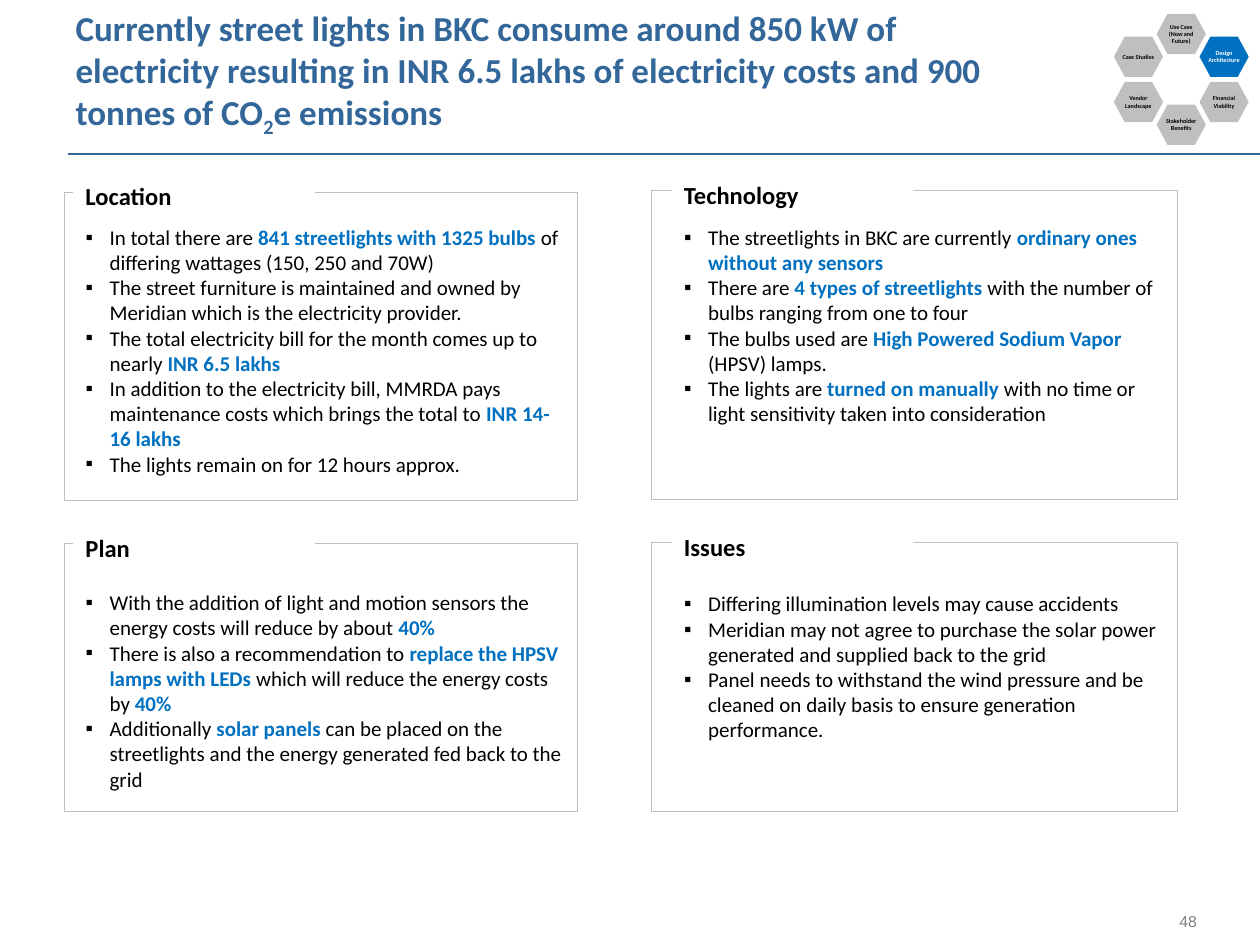
import math
from lxml import etree
from pptx import Presentation, util as u
from pptx.dml.color import RGBColor
from pptx.enum import shapes, text
from pptx.oxml.ns import qn

# Grid: 100 columns by 75 rows of square cells
COLS, ROWS = 100, 75
CELL = u.Inches(0.1)
NAVY, BLUE, GREY, BLACK, WHITE = "336699", "0070C0", "BFBFBF", "000000", "FFFFFF"
ALIGN, ANCHOR = text.PP_ALIGN, text.MSO_ANCHOR

TITLE = ("Currently street lights in BKC consume around 850 kW of electricity resulting in "
         "INR 6.5 lakhs of electricity costs and 900 tonnes of CO", "2", "e emissions")

# Frame box, heading inset and lift, list drop and height, heading, list (** marks emphasis)
PANELS = [
    ((5.1, 15.3, 40.7, 24.4), (0.7, 1.4), (2, 21.2), "Location", [
        "In total there are **841 streetlights with 1325 bulbs **of differing wattages (150, 250 and 70W)",
        "The street furniture is maintained and owned by Meridian which is the electricity provider.",
        "The total electricity bill for the month comes up to nearly **INR 6.5 lakhs**",
        "In addition to the electricity bill, MMRDA pays maintenance costs which brings "
        "the total to **INR 14-16 lakhs**",
        "The lights remain on for 12 hours approx."]),
    ((51.7, 15.1, 41.7, 24.5), (1.6, 1.3), (2.2, 21.2), "Technology", [
        "The streetlights in BKC are currently **ordinary ones without any sensors**",
        "There are **4 types of streetlights **with the number of bulbs ranging from one to four",
        "The bulbs used are **High Powered Sodium Vapor **(HPSV) lamps.",
        "The lights are **turned on manually **with no time or light sensitivity taken into consideration"]),
    ((5.1, 43.1, 40.7, 21.3), (0.7, 1.3), (3.2, 20.2), "Plan", [
        "With the addition of light and motion sensors the energy costs will reduce by about **40%**",
        "There is also a recommendation to **replace the HPSV lamps with LEDs **which will "
        "reduce the energy costs by **40%**",
        "Additionally **solar panels **can be placed on the streetlights and the energy "
        "generated fed back to the grid"]),
    ((51.7, 43, 41.7, 21.4), (1.6, 1.3), (3.4, 15.1), "Issues", [
        "Differing illumination levels may cause accidents",
        "Meridian may not agree to purchase the solar power generated and supplied back to the grid",
        "Panel needs to withstand the wind pressure and be cleaned on daily basis to ensure "
        "generation performance."]),
]

# Clockwise from the top
TOPICS = ["Use Case\n(Now and Future)", "Design Architecture", "Financial Viability",
          "Stakeholder Benefits", "Vendor Landscape", "Case Studies"]
CURRENT = "Design Architecture"


def color(value):
    return RGBColor.from_string(value)


def cells(*values):
    return [round(v * CELL) for v in values]


def style(r, size, value, bold=False, name="Calibri"):
    f = r.font
    f.name, f.size, f.bold = name, u.Pt(size), bold
    f.color.rgb = color(value)


def setup(tf, margins=(0.1, 0.05, 0.1, 0.05), anchor=ANCHOR.TOP):
    tf.word_wrap = True
    tf.auto_size = text.MSO_AUTO_SIZE.NONE
    tf.vertical_anchor = anchor
    tf.margin_left, tf.margin_top, tf.margin_right, tf.margin_bottom = map(u.Inches, margins)


def write(tf, words, size, value, align=ALIGN.LEFT, bold=True, name="Calibri"):
    tf.text = words
    for p in tf.paragraphs:
        p.alignment = align
        for r in p.runs:
            style(r, size, value, bold, name)


def place(sp, box):
    sp.left, sp.top, sp.width, sp.height = cells(*box)


def add_shape(s, kind, box, fill=None, line=None):
    sp = s.shapes.add_shape(kind, *cells(*box))
    sp.shadow.inherit = False
    if fill:
        sp.fill.solid()
        sp.fill.fore_color.rgb = color(fill)
    else:
        sp.fill.background()
    if line:
        sp.line.color.rgb = color(line)
        sp.line.width = u.Pt(0.25)
    else:
        sp.line.fill.background()
    return sp


def add_bullet(p):
    p.space_before = u.Pt(0)
    pPr = p._p.get_or_add_pPr()
    pPr.set("marL", str(u.Inches(0.19)))
    pPr.set("indent", str(-u.Inches(0.19)))
    etree.SubElement(pPr, qn("a:buFont")).set("typeface", "Arial")
    etree.SubElement(pPr, qn("a:buChar")).set("char", "▪")


def header(s, box):
    # Title with a subscript, and the rule below it
    sp = s.shapes.title
    place(sp, box)
    setup(sp.text_frame, (0, 0.05, 0.1, 0), ANCHOR.BOTTOM)
    p = sp.text_frame.paragraphs[0]
    p.alignment = ALIGN.LEFT
    for part in TITLE:
        r = p.add_run()
        r.text = part
        style(r, 20, NAVY, True)
    p.runs[1].font._element.set("baseline", "-25000")

    rule = s.shapes.add_connector(shapes.MSO_CONNECTOR.STRAIGHT, *cells(5.4, 12.2, COLS, 12.2))
    rule.line.color.rgb = color(NAVY)
    rule.line.width = u.Pt(1)
    etree.SubElement(rule._element.spPr, qn("a:effectLst"))


def panel(s, body, box, heading_offset, list_layout, heading, items):
    left, top, width, height = box
    inset, lift = heading_offset
    drop, list_height = list_layout
    add_shape(s, shapes.MSO_SHAPE.RECTANGLE, box, line=GREY)

    # Heading interrupts the top edge of the frame
    label = add_shape(s, shapes.MSO_SHAPE.RECTANGLE, (left + inset, top - lift, 19.2, 3.4), WHITE)
    setup(label.text_frame)
    write(label.text_frame, heading, 14, BLACK)

    # Bulleted list
    place(body, (left + inset, top + drop, 40, list_height))
    tf = body.text_frame
    setup(tf)
    for i, item in enumerate(items):
        p = tf.add_paragraph() if i else tf.paragraphs[0]
        add_bullet(p)
        for j, part in enumerate(item.split("**")):
            if part:
                r = p.add_run()
                r.text = part
                style(r, 12, BLUE if j % 2 else BLACK, bool(j % 2))


def topic_ring(s, box):
    left, top, width, height = box
    w, h = 3.9, 3.2
    for i, topic in enumerate(TOPICS):
        angle = i * math.tau / len(TOPICS)
        x = left + (width - w) / 2 * (1 + math.sin(angle) / math.sin(math.tau / 6))
        y = top + (height - h) / 2 * (1 - math.cos(angle))
        active = topic == CURRENT
        sp = add_shape(s, shapes.MSO_SHAPE.HEXAGON, (x, y, w, h), BLUE if active else GREY)
        sp.adjustments[0] = 0.27
        setup(sp.text_frame, (0, 0, 0, 0), ANCHOR.MIDDLE)
        write(sp.text_frame, topic, 3.5, WHITE if active else BLACK, ALIGN.CENTER)


def page_number(s, box):
    tf = s.shapes.add_textbox(*cells(*box)).text_frame
    setup(tf, (0, 0, 0, 0), ANCHOR.MIDDLE)
    write(tf, "48", 9, "7F7F7F", ALIGN.RIGHT, False, "Arial")


def main():
    prs = Presentation()
    prs.slide_width, prs.slide_height = cells(COLS, ROWS)
    # The comparison layout has a title and four body placeholders
    s = prs.slides.add_slide(prs.slide_layouts[4])
    bodies = list(s.placeholders)[1:]
    header(s, (6, 0, 76.9, 11))
    for body, parts in zip(bodies, PANELS):
        panel(s, body, *parts)
    topic_ring(s, (88.4, 1.1, 10.7, 10.4))
    page_number(s, (89.1, 71.8, 5.9, 2.7))
    prs.save("out.pptx")


if __name__ == "__main__":
    main()
